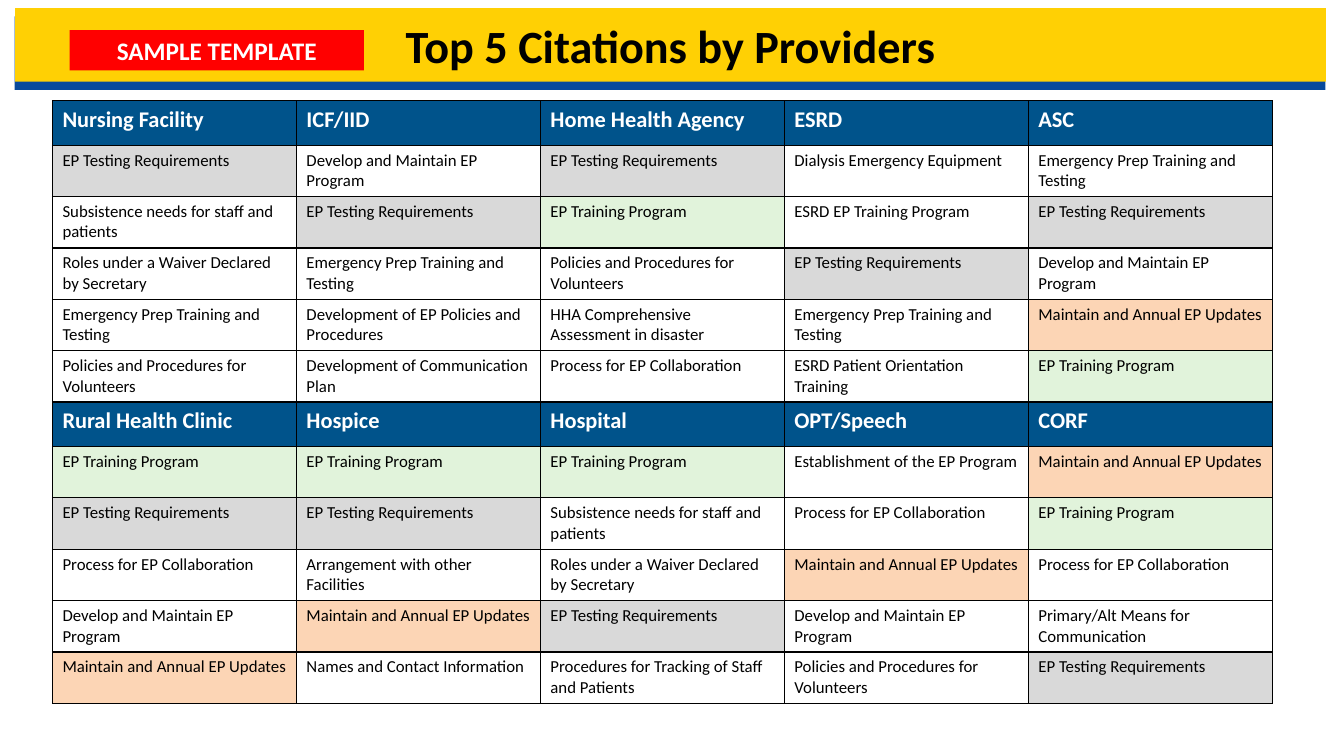
import pptx
import pptx.util
import pptx.dml.color
import pptx.enum.shapes
import pptx.enum.text
import pptx.oxml
import pptx.oxml.ns

TITLE = "Top 5 Citations by Providers"
BADGE = "SAMPLE TEMPLATE"
TESTING = "EP Testing Requirements"
TRAINING = "EP Training Program"
UPDATES = "Maintain and Annual EP Updates"
DEVELOP = "Develop and Maintain EP Program"
PREP = "Emergency Prep Training and Testing"
VOLUNTEERS = "Policies and Procedures for Volunteers"
COLLABORATION = "Process for EP Collaboration"
SUBSISTENCE = "Subsistence needs for staff and patients"
WAIVER = "Roles under a Waiver Declared by Secretary"

PROVIDER_GROUPS = [
    {
        "Nursing Facility": [TESTING, SUBSISTENCE, WAIVER, PREP, VOLUNTEERS],
        "ICF/IID": [DEVELOP, TESTING, PREP, "Development of EP Policies and Procedures",
                    "Development of Communication Plan"],
        "Home Health Agency": [TESTING, TRAINING, VOLUNTEERS,
                               "HHA Comprehensive Assessment in disaster", COLLABORATION],
        "ESRD": ["Dialysis Emergency Equipment", "ESRD EP Training Program", TESTING, PREP,
                 "ESRD Patient Orientation Training"],
        "ASC": [PREP, TESTING, DEVELOP, UPDATES, TRAINING],
    },
    {
        "Rural Health Clinic": [TRAINING, TESTING, COLLABORATION, DEVELOP, UPDATES],
        "Hospice": [TRAINING, TESTING, "Arrangement with other Facilities", UPDATES,
                    "Names and Contact Information"],
        "Hospital": [TRAINING, SUBSISTENCE, WAIVER, TESTING,
                     "Procedures for Tracking of Staff and Patients"],
        "OPT/Speech": ["Establishment of the EP Program", COLLABORATION, UPDATES, DEVELOP,
                       VOLUNTEERS],
        "CORF": [UPDATES, TRAINING, COLLABORATION, "Primary/Alt Means for Communication",
                 TESTING],
    },
]
COLORS = {"yellow": "FFD004", "blue": "084A9C", "red": "FF0000", "header": "00538B",
          "grey": "D9D9D9", "green": "E1F3DB", "peach": "FCD5B5",
          "white": "FFFFFF", "black": "000000"}
CITATION_FILLS = {TESTING: "grey", TRAINING: "green", UPDATES: "peach"}
FONT = "Calibri"
HEADER_HEIGHT, CITATION_HEIGHT = 0.44, 0.51
COLUMN_WIDTH = 2.42

Inches = pptx.util.Inches


def rgb(name):
    return pptx.dml.color.RGBColor.from_string(COLORS[name])


def paint(item, color):
    item.fill.solid()
    item.fill.fore_color.rgb = rgb(color)


def write(frame, text, size, color, bold, align=None):
    frame.text = text
    para = frame.paragraphs[0]
    para.alignment = align
    font = para.runs[0].font
    font.name, font.size, font.bold = FONT, pptx.util.Pt(size), bold
    font.color.rgb = rgb(color)


def add_borders(cell):
    properties = cell._tc.get_or_add_tcPr()
    for side in ("lnL", "lnR", "lnT", "lnB"):
        properties.append(pptx.oxml.parse_xml(
            f'<a:{side} {pptx.oxml.ns.nsdecls("a")} w="12700"><a:solidFill>'
            f'<a:srgbClr val="{COLORS["black"]}"/></a:solidFill></a:{side}>'))


def add_title(slide):
    title = slide.shapes.title
    title.left, title.top = Inches(0.15), Inches(0.08)
    title.width, title.height = Inches(13), Inches(0.73)
    paint(title, "yellow")
    title._element.spPr.append(pptx.oxml.parse_xml(
        f'<a:effectLst {pptx.oxml.ns.nsdecls("a")}>'
        f'<a:outerShdw dist="{pptx.util.Pt(6)}" dir="{94 * 60000}" algn="ctr" rotWithShape="0">'
        f'<a:srgbClr val="{COLORS["blue"]}"/></a:outerShdw></a:effectLst>'))
    title.text_frame.vertical_anchor = pptx.enum.text.MSO_ANCHOR.MIDDLE
    write(title.text_frame, TITLE, 33, "black", True, pptx.enum.text.PP_ALIGN.CENTER)


def add_badge(slide):
    badge = slide.shapes.add_shape(pptx.enum.shapes.MSO_SHAPE.RECTANGLE,
                                   Inches(0.69), Inches(0.3), Inches(2.92), Inches(0.4))
    badge.shadow.inherit = False
    paint(badge, "red")
    badge.line.fill.background()
    write(badge.text_frame, BADGE, 18, "white", True, pptx.enum.text.PP_ALIGN.CENTER)


def add_citations(slide):
    rows = []
    for group in PROVIDER_GROUPS:
        rows.append((True, list(group)))
        rows.extend((False, citations) for citations in zip(*group.values()))
    heights = [HEADER_HEIGHT if header else CITATION_HEIGHT for header, _ in rows]
    columns = len(rows[0][1])
    table = slide.shapes.add_table(len(rows), columns, Inches(0.52), Inches(1),
                                   Inches(COLUMN_WIDTH * columns), Inches(sum(heights))).table
    table.first_row = table.horz_banding = False
    for column in table.columns:
        column.width = Inches(COLUMN_WIDTH)
    for row_index, (header, texts) in enumerate(rows):
        table.rows[row_index].height = Inches(heights[row_index])
        for column_index, text in enumerate(texts):
            cell = table.cell(row_index, column_index)
            add_borders(cell)
            if header:
                paint(cell, "header")
                write(cell.text_frame, text, 16, "white", True)
            else:
                paint(cell, CITATION_FILLS.get(text, "white"))
                write(cell.text_frame, text, 12, "black", False)


def main():
    deck = pptx.Presentation()
    deck.slide_width, deck.slide_height = Inches(13.33), Inches(7.5)
    slide = deck.slides.add_slide(deck.slide_layouts[5])
    add_title(slide)
    add_citations(slide)
    add_badge(slide)
    deck.save("out.pptx")


if __name__ == "__main__":
    main()
